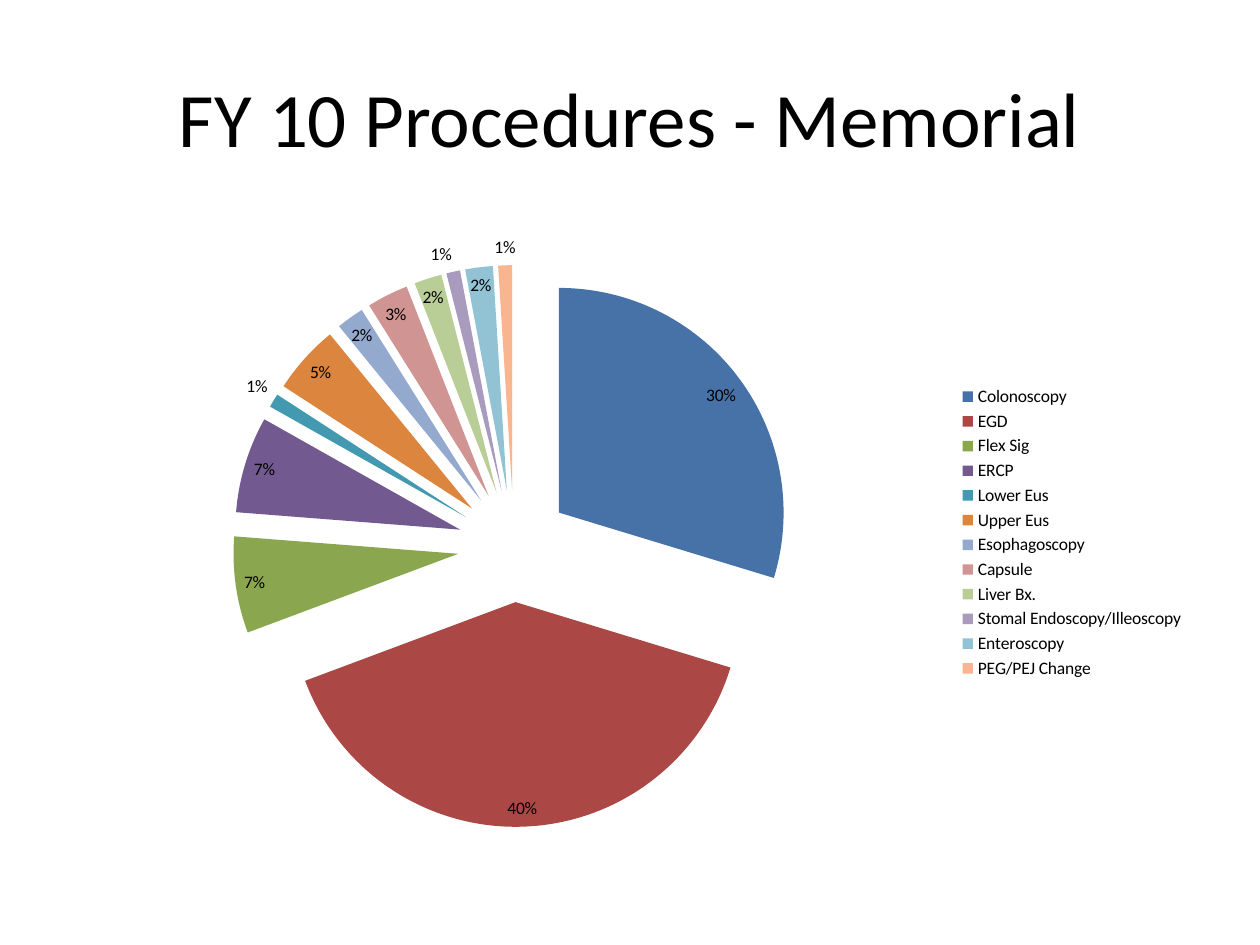
from lxml.etree import Element
from pptx import Presentation
from pptx.chart.data import CategoryChartData
from pptx.dml.color import RGBColor
from pptx.enum.chart import XL_CHART_TYPE, XL_LABEL_POSITION, XL_LEGEND_POSITION
from pptx.enum.text import MSO_ANCHOR, PP_ALIGN
from pptx.oxml.ns import qn
from pptx.util import Cm, Pt

BLACK = RGBColor(0x00, 0x00, 0x00)
BLUE = RGBColor(0x46, 0x72, 0xA8)
RED = RGBColor(0xAB, 0x47, 0x44)
GREEN = RGBColor(0x8A, 0xA6, 0x4F)
PURPLE = RGBColor(0x72, 0x59, 0x90)
TEAL = RGBColor(0x42, 0x99, 0xB0)
ORANGE = RGBColor(0xDC, 0x85, 0x3E)
LIGHT_BLUE = RGBColor(0x93, 0xA9, 0xCE)
LIGHT_RED = RGBColor(0xD0, 0x94, 0x93)
LIGHT_GREEN = RGBColor(0xB9, 0xCD, 0x96)
LIGHT_PURPLE = RGBColor(0xA9, 0x9B, 0xBD)
LIGHT_TEAL = RGBColor(0x92, 0xC3, 0xD5)
LIGHT_ORANGE = RGBColor(0xF9, 0xB5, 0x90)

PROCEDURES = [
    ("Colonoscopy", 0.30, BLUE),
    ("EGD", 0.40, RED),
    ("Flex Sig", 0.07, GREEN),
    ("ERCP", 0.07, PURPLE),
    ("Lower Eus", 0.01, TEAL),
    ("Upper Eus", 0.05, ORANGE),
    ("Esophagoscopy", 0.02, LIGHT_BLUE),
    ("Capsule", 0.03, LIGHT_RED),
    ("Liver Bx.", 0.02, LIGHT_GREEN),
    ("Stomal Endoscopy/Illeoscopy", 0.01, LIGHT_PURPLE),
    ("Enteroscopy", 0.02, LIGHT_TEAL),
    ("PEG/PEJ Change", 0.01, LIGHT_ORANGE),
]


def set_values(target, values):
    for name, value in values.items():
        setattr(target, name, value)


class SlideBuilder:
    def __init__(self, page, font_name, color):
        self.page = page
        self.font_name = font_name
        self.color = color

    def style_font(self, font, size):
        set_values(font, {"name": self.font_name, "size": Pt(size)})
        font.color.rgb = self.color

    def title(self, text, bounds, size):
        box = self.page.shapes.add_textbox(*bounds)
        set_values(box.text_frame, {"word_wrap": True,
                                    "vertical_anchor": MSO_ANCHOR.MIDDLE})
        para = box.text_frame.paragraphs[0]
        para.alignment = PP_ALIGN.CENTER
        span = para.add_run()
        span.text = text
        self.style_font(span.font, size)

    def exploded_pie(self, slices, bounds, size, explosion):
        names, values, colors = zip(*slices)
        data = CategoryChartData(number_format="0%")
        data.categories = names
        data.add_series("Series 1", values)
        chart = self.page.shapes.add_chart(XL_CHART_TYPE.PIE, *bounds, data).chart
        set_values(chart, {"has_title": False, "has_legend": True})
        self.style_font(chart.font, size)
        set_values(chart.legend, {"position": XL_LEGEND_POSITION.RIGHT,
                                  "include_in_layout": False})

        plot = chart.plots[0]
        set_values(plot, {"vary_by_categories": True, "has_data_labels": True})
        set_values(plot.data_labels, {
            "show_value": True,
            "show_percentage": False,
            "number_format": "0%",
            "number_format_is_linked": False,
            "position": XL_LABEL_POSITION.BEST_FIT,
        })
        self.style_font(plot.data_labels.font, size)

        series = plot.series[0]
        offset = Element(qn("c:explosion"), val=str(explosion))
        series._element.find(qn("c:tx")).addnext(offset)
        for index, color in enumerate(colors):
            fill = series.points[index].format.fill
            fill.solid()
            fill.fore_color.rgb = color


def main():
    deck = Presentation()
    set_values(deck, {"slide_width": Cm(25.4), "slide_height": Cm(19.05)})
    page = deck.slides.add_slide(deck.slide_layouts[6])
    builder = SlideBuilder(page, "Calibri", BLACK)
    left, width = Cm(1.27), Cm(22.86)
    builder.title("FY 10 Procedures - Memorial",
                  (left, Cm(0.76), width, Cm(3.18)), size=44)
    builder.exploded_pie(PROCEDURES, (left, Cm(4.45), width, Cm(12.57)),
                         size=10, explosion=25)
    deck.save("out.pptx")


if __name__ == "__main__":
    main()
